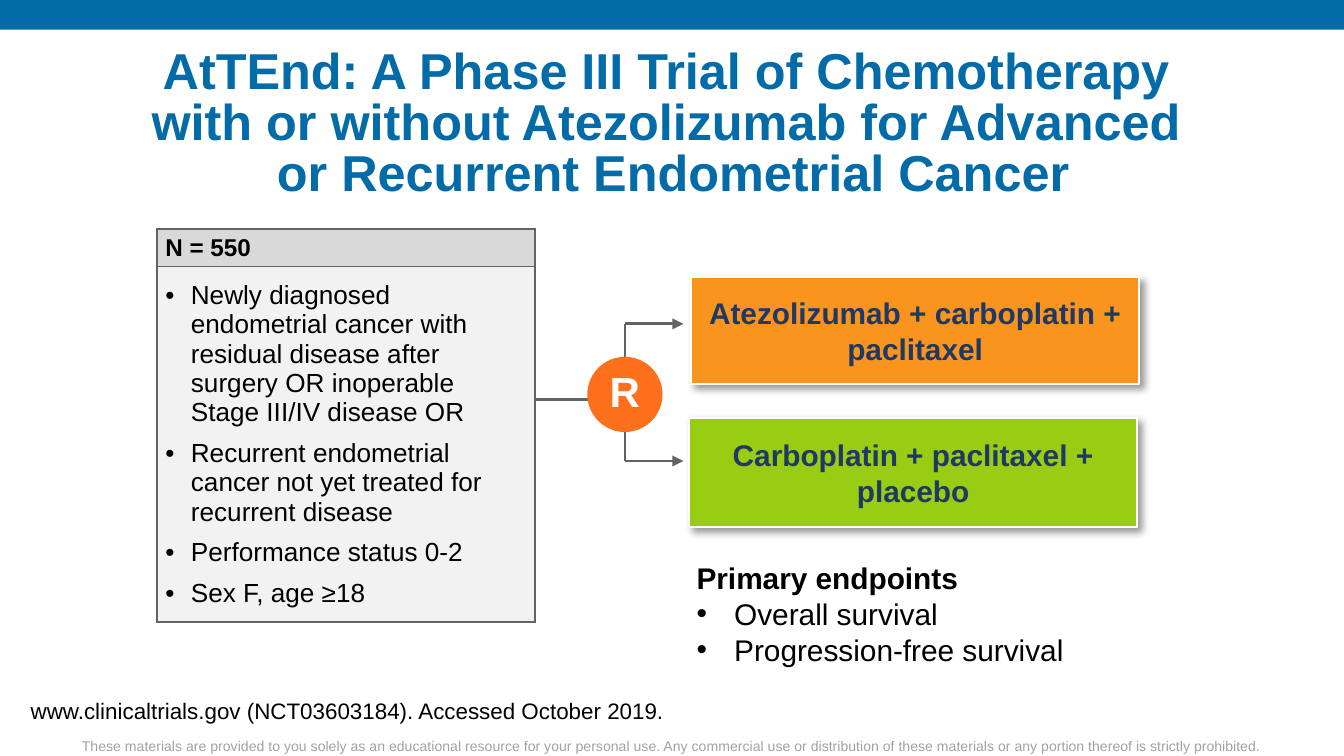
from lxml.etree import SubElement
from pptx import Presentation
from pptx.dml.color import RGBColor
from pptx.enum.shapes import MSO_CONNECTOR, MSO_SHAPE
from pptx.enum.text import MSO_ANCHOR, PP_ALIGN
from pptx.oxml.ns import qn
from pptx.util import Inches, Pt

TITLE = ("AtTEnd: A Phase III Trial of Chemotherapy \v"
         "with or without Atezolizumab for Advanced \v"
         "or Recurrent Endometrial Cancer")
ENROLLMENT = "N = 550"
CRITERIA = [
    "Newly diagnosed endometrial cancer with residual disease after surgery "
    "OR inoperable Stage III/IV disease OR",
    "Recurrent endometrial cancer not yet treated for recurrent disease",
    "Performance status 0-2",
    "Sex F, age ≥18",
]
# text, fill, left, top, height
ARMS = [
    ("Atezolizumab + carboplatin + paclitaxel", "orange", 51.45, 20.6, 8),
    ("Carboplatin + paclitaxel + placebo", "green", 51.3, 31.1, 8.15),
]
ENDPOINTS_HEADING = "Primary endpoints"
ENDPOINTS = ["Overall survival", "Progression-free survival"]
REFERENCE = "www.clinicaltrials.gov (NCT03603184). Accessed October 2019."
DISCLAIMER = ("These materials are provided to you solely as an educational resource "
              "for your personal use. Any commercial use or distribution of these "
              "materials or any portion thereof is strictly prohibited.")
COLORS = {
    "blue": "036BA7", "navy": "203864", "orange": "F9951E", "green": "99CD14",
    "node": "FE701B", "line": "626362", "header": "D9D9D9", "body": "F2F2F2",
    "muted": "A1A2A1", "black": "000000", "white": "FFFFFF",
}

deck = Presentation()
deck.slide_width = Inches(10)
deck.slide_height = deck.slide_width * 9 // 16
slide = deck.slides.add_slide(deck.slide_layouts[6])
shapes = slide.shapes


def units(*lengths):
    """Lengths on a square grid of 100 columns across the slide."""
    return [round(deck.slide_width * length / 100) for length in lengths]


def color(name):
    return RGBColor.from_string(COLORS[name])


def add_bullet(paragraph, indent):
    properties = paragraph._p.get_or_add_pPr()
    properties.set("marL", str(Inches(indent)))
    properties.set("indent", str(-Inches(indent)))
    SubElement(properties, qn("a:buFont"), typeface="Arial")
    SubElement(properties, qn("a:buChar"), char="•")


def write(frame, lines, size, ink="black", bold=False, align=None, indent=0, gap=0):
    """Add one paragraph a line, bulleted if indented, using an empty first one."""
    for line in lines:
        first = not frame.text
        paragraph = frame.paragraphs[0] if first else frame.add_paragraph()
        paragraph.text = line
        paragraph.alignment = align
        if indent:
            add_bullet(paragraph, indent)
        if gap and not first:
            paragraph.space_before = Pt(gap)
        font = paragraph.font
        font.name, font.size, font.bold = "Arial", Pt(size), bold
        font.color.rgb = color(ink)


def add_text(box, lines, size, wrap=True, anchor=MSO_ANCHOR.TOP, **look):
    frame = shapes.add_textbox(*units(*box)).text_frame
    frame.word_wrap, frame.vertical_anchor = wrap, anchor
    write(frame, lines, size, **look)
    return frame


def add_block(kind, box, fill, outline=None):
    block = shapes.add_shape(kind, *units(*box))
    block.shadow.inherit = False
    block.fill.solid()
    block.fill.fore_color.rgb = color(fill)
    if outline:
        block.line.color.rgb, block.line.width = color(outline), Pt(1)
    else:
        block.line.fill.background()
    return block


def add_drop_shadow(block):
    effects = block._element.spPr.find(qn("a:effectLst"))
    shadow = SubElement(effects, qn("a:outerShdw"), blurRad=str(Pt(4)),
                        dist=str(Pt(3)), dir=str(45 * 60000), algn="tl", rotWithShape="0")
    black = SubElement(shadow, qn("a:srgbClr"), val=COLORS["black"])
    SubElement(black, qn("a:alpha"), val="40000")


def add_line(start, end, arrow=False):
    line = shapes.add_connector(MSO_CONNECTOR.STRAIGHT, *units(*start, *end))
    line.line.color.rgb, line.line.width = color("line"), Pt(1.5)
    if arrow:
        SubElement(line._element.spPr.find(qn("a:ln")), qn("a:tailEnd"), type="triangle")
    SubElement(line._element.spPr, qn("a:effectLst"))


def format_cell(cell, fill):
    properties = cell._tc.get_or_add_tcPr()
    for side in ("lnL", "lnR", "lnT", "lnB"):
        border = SubElement(properties, qn(f"a:{side}"), w=str(Pt(1)))
        paint = SubElement(border, qn("a:solidFill"))
        SubElement(paint, qn("a:srgbClr"), val=COLORS["line"])
    cell.fill.solid()
    cell.fill.fore_color.rgb = color(fill)
    cell.margin_left = cell.margin_right = Inches(0.06)
    cell.margin_top = cell.margin_bottom = Inches(0.03)
    cell.vertical_anchor = MSO_ANCHOR.MIDDLE


# Frame of the slide
add_block(MSO_SHAPE.RECTANGLE, (0, 0, 100, 2.2), "blue")
add_text((2.5, 54.4, 94.9, 2.3), [DISCLAIMER], 7.5, ink="muted", align=PP_ALIGN.CENTER)
add_text((1.3, 51.4, 50, 3), [REFERENCE], 12, wrap=False)

# Randomization: one stem in, one branch to each arm
branch_x, arrow_x = 46.5, 50.85
branch_rows = (24.1, 34.3)
add_line((39.1, 29.7), (44.2, 29.7))
add_line((branch_x, branch_rows[1]), (branch_x, branch_rows[0]))
for row in branch_rows:
    add_line((branch_x, row), (arrow_x, row), arrow=True)

diameter, label_side, node_y = 5.6, 4.7, 29.35
add_block(MSO_SHAPE.OVAL, (branch_x - diameter / 2, node_y - diameter / 2,
                           diameter, diameter), "node")
node_label = add_text((branch_x - label_side / 2, node_y - label_side / 2,
                       label_side, label_side), ["R"], 22.5, anchor=MSO_ANCHOR.MIDDLE,
                      ink="white", bold=True, align=PP_ALIGN.CENTER)
node_label.margin_left = node_label.margin_right = node_label.margin_top = 0

# Eligibility
row_heights = (2.7, 26.4)
eligibility = shapes.add_table(2, 1, *units(11.7, 17.05, 28.1, sum(row_heights))).table
eligibility.horz_banding = False
for row, height, fill in zip(eligibility.rows, units(*row_heights), ("header", "body")):
    row.height = height
    format_cell(row.cells[0], fill)
write(eligibility.cell(0, 0).text_frame, [ENROLLMENT], 13, bold=True)
write(eligibility.cell(1, 0).text_frame, CRITERIA, 14, indent=0.19, gap=6)

# Treatment arms
for treatment, fill, left, top, height in ARMS:
    arm = add_block(MSO_SHAPE.RECTANGLE, (left, top, 33.3, height), fill, "white")
    add_drop_shadow(arm)
    arm.text_frame.word_wrap = True
    arm.text_frame.vertical_anchor = MSO_ANCHOR.MIDDLE
    write(arm.text_frame, [treatment], 16, ink="navy", bold=True, align=PP_ALIGN.CENTER)

endpoints = add_text((50.85, 41.15, 29.7, 9.1), [ENDPOINTS_HEADING], 16, wrap=False, bold=True)
write(endpoints, ENDPOINTS, 16, indent=0.28)

title = add_text((5.1, 3.85, 90, 10.9), [TITLE], 27, anchor=MSO_ANCHOR.MIDDLE,
                 ink="blue", bold=True, align=PP_ALIGN.CENTER)
title.paragraphs[0].line_spacing = 0.85

deck.save("out.pptx")
